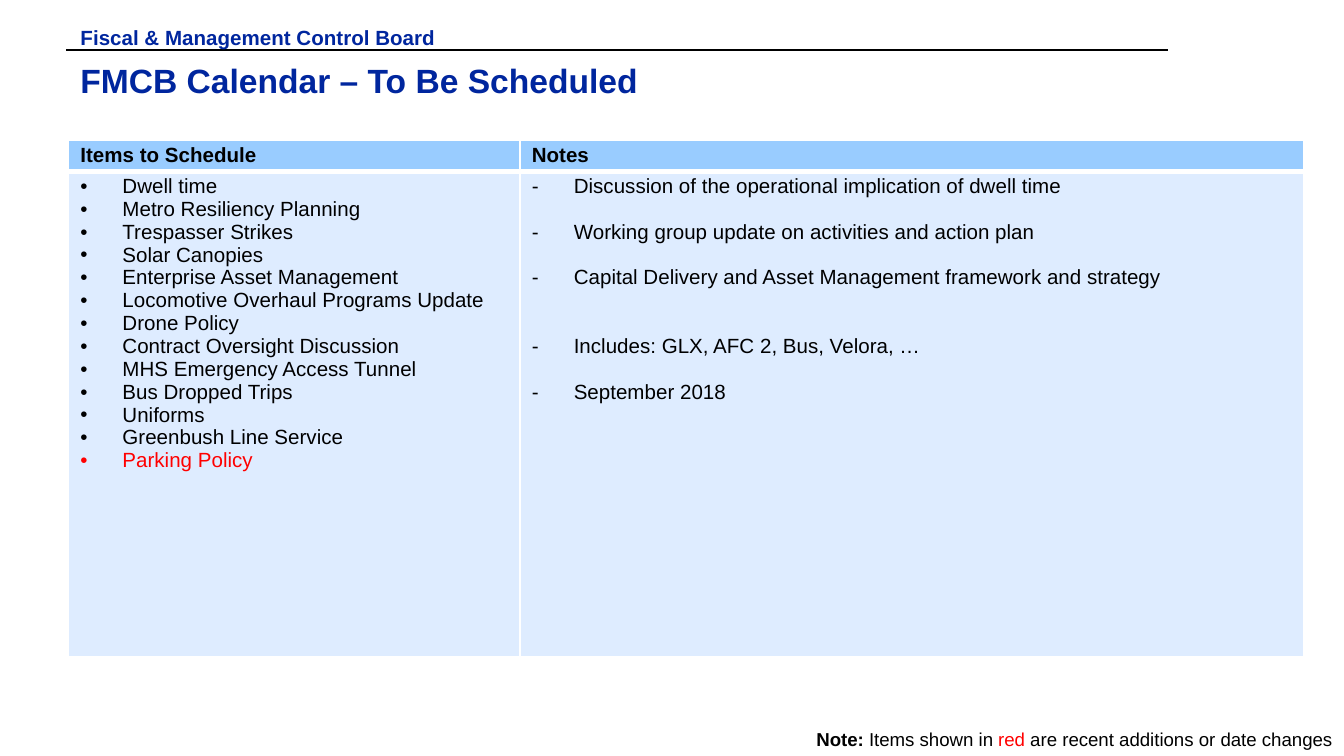
"""Builds the calendar slide of items still to be scheduled."""
from lxml.etree import SubElement
from pptx import Presentation
from pptx.dml.color import RGBColor
from pptx.enum.shapes import MSO_CONNECTOR
from pptx.enum.text import MSO_ANCHOR, PP_ALIGN
from pptx.oxml.ns import qn
from pptx.util import Pt

NAVY, BLACK, RED, WHITE = "00269E", "000000", "FF0000", "FFFFFF"
LINE_HEIGHT = 12.24


def color(value):
    return RGBColor.from_string(value)


def write(paragraph, text, size=11, ink=BLACK, bold=False, bullet=None, before=0, spacing=None):
    properties = paragraph._p.get_or_add_pPr()
    if spacing:
        paragraph.line_spacing = spacing
    if before:
        paragraph.space_before = Pt(before)
    if bullet:
        properties.set("marL", str(Pt(22.5)))
        properties.set("indent", str(Pt(-22.5)))
        SubElement(properties, qn("a:buFont"), typeface="Arial")
        SubElement(properties, qn("a:buChar"), char=bullet)
    run = paragraph.add_run()
    run.text = text
    run.font.name = "Arial"
    run.font.size = Pt(size)
    run.font.bold = bold
    run.font.color.rgb = color(ink)


presentation = Presentation()
presentation.slide_width, presentation.slide_height = Pt(720), Pt(405)
slide = presentation.slides.add_slide(presentation.slide_layouts[6])

rule = slide.shapes.add_connector(MSO_CONNECTOR.STRAIGHT, Pt(35.4), Pt(26.6), Pt(625.6), Pt(26.6))
rule.line.color.rgb = color(BLACK)
rule.line.width = Pt(1)
SubElement(rule._element.spPr, qn("a:effectLst"))

items = ["Dwell time", "Metro Resiliency Planning", "Trespasser Strikes", "Solar Canopies",
         "Enterprise Asset Management", "Locomotive Overhaul Programs Update", "Drone Policy",
         "Contract Oversight Discussion", "MHS Emergency Access Tunnel", "Bus Dropped Trips",
         "Uniforms", "Greenbush Line Service", "Parking Policy"]
notes = [("Discussion of the operational implication of dwell time", 0),
         ("Working group update on activities and action plan", 1),
         ("Capital Delivery and Asset Management framework and strategy", 1),
         ("Includes: GLX, AFC 2, Bus, Velora, …", 2),
         ("September 2018", 1)]
columns = [
    ("Items to Schedule", 241.8, "•",
     [(item, 0, RED if item == "Parking Policy" else BLACK) for item in items]),
    ("Notes", 419.9, "-", [(note, skipped, BLACK) for note, skipped in notes]),
]

table = slide.shapes.add_table(2, 2, Pt(36.7), Pt(75.2), Pt(661.7), Pt(276.8)).table
table.rows[0].height, table.rows[1].height = Pt(16.5), Pt(260.3)
for column, (heading, width, bullet, entries) in enumerate(columns):
    table.columns[column].width = Pt(width)
    for row, fill in enumerate(["99CCFF", "DEECFF"]):
        cell = table.cell(row, column)
        cell.margin_left = cell.margin_right = Pt(6.4)
        cell.margin_top = cell.margin_bottom = Pt(2)
        cell.vertical_anchor = MSO_ANCHOR.TOP if row else MSO_ANCHOR.MIDDLE
        properties = cell._tc.get_or_add_tcPr()
        for side in "LRTB":
            thick = (row, side) in [(0, "B"), (1, "T")]
            border = SubElement(properties, qn(f"a:ln{side}"), w=str(Pt(3 if thick else 1)))
            SubElement(SubElement(border, qn("a:solidFill")), qn("a:srgbClr"), val=WHITE)
        cell.fill.solid()
        cell.fill.fore_color.rgb = color(fill)
    write(table.cell(0, column).text_frame.paragraphs[0], heading, bold=True)
    frame = table.cell(1, column).text_frame
    for index, (text, skipped, ink) in enumerate(entries):
        paragraph = frame.add_paragraph() if index else frame.paragraphs[0]
        write(paragraph, text, ink=ink, bullet=bullet,
              before=skipped * LINE_HEIGHT, spacing=Pt(LINE_HEIGHT))

texts = [
    (36.7, 28.8, 601.9, 34.6, PP_ALIGN.LEFT, 18, [("FMCB Calendar – To Be Scheduled", NAVY, True)]),
    (36.7, 10, 245.5, 13.7, PP_ALIGN.LEFT, 11, [("Fiscal & Management Control Board", NAVY, True)]),
    (417.6, 386.6, 302.4, 18.4, PP_ALIGN.RIGHT, 10,
     [("Note: ", BLACK, True), ("Items shown in ", BLACK, False), ("red", RED, False),
      (" are recent additions or date changes", BLACK, False)]),
]
for left, top, width, height, alignment, size, runs in texts:
    frame = slide.shapes.add_textbox(Pt(left), Pt(top), Pt(width), Pt(height)).text_frame
    frame.word_wrap = True
    frame.margin_left = frame.margin_right = Pt(6.4)
    frame.margin_top = frame.margin_bottom = Pt(3.2)
    frame.paragraphs[0].alignment = alignment
    for text, ink, bold in runs:
        write(frame.paragraphs[0], text, size=size, ink=ink, bold=bold)

presentation.save("out.pptx")
